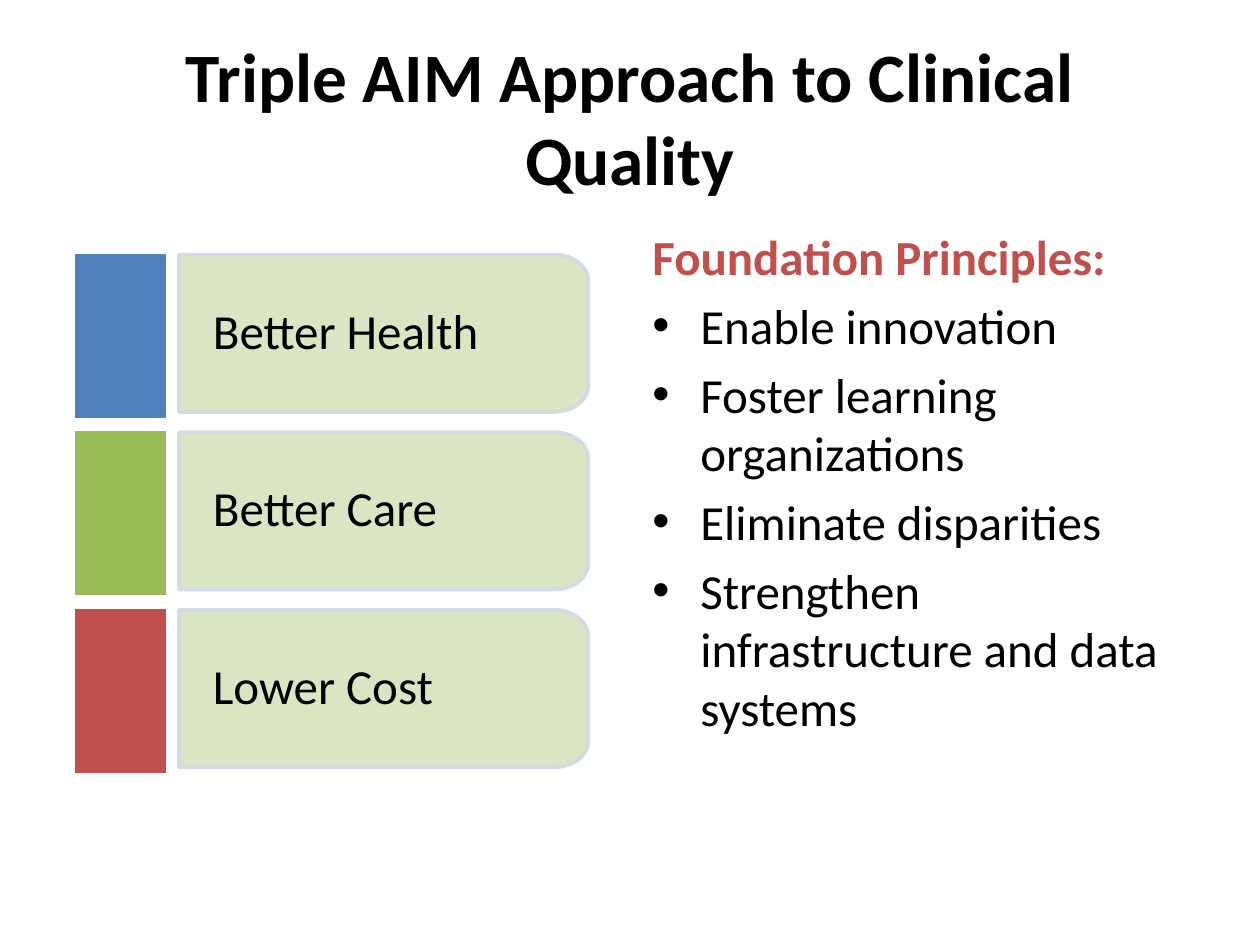
import math

import pptx
import pptx.dml.color
import pptx.enum.shapes
import pptx.enum.text
import pptx.oxml.ns
import pptx.util
from lxml import etree
from pptx.util import Inches

AIMS = [("Better Health", "4F81BD"), ("Better Care", "9BBB59"), ("Lower Cost", "C0504D")]
PRINCIPLES = [
    "Enable innovation",
    "Foster learning organizations",
    "Eliminate disparities",
    "Strengthen infrastructure and data systems",
]


def color(hex_string):
    """Return the colour for a hex string."""
    return pptx.dml.color.RGBColor.from_string(hex_string)


def add_run(paragraph, text, size, hex_string="000000", bold=False):
    """Add one formatted run to a paragraph."""
    run = paragraph.add_run()
    run.text = text
    run.font.name = "Calibri"
    run.font.size = pptx.util.Pt(size)
    run.font.bold = bold
    run.font.color.rgb = color(hex_string)


def style_shape(shape, fill, line, opacity=100):
    """Set fill, outline and opacity, and drop the shadow."""
    shape.shadow.inherit = False
    shape.fill.solid()
    shape.fill.fore_color.rgb = color(fill)
    shape.line.color.rgb = color(line)
    shape.line.width = pptx.util.Pt(2)
    if opacity < 100:
        for element in shape.element.spPr.iter(pptx.oxml.ns.qn("a:srgbClr")):
            alpha = etree.SubElement(element, pptx.oxml.ns.qn("a:alpha"))
            alpha.set("val", str(opacity * 1000))


def set_margins(frame, left, top, right, bottom):
    """Set the four text margins in inches."""
    frame.margin_left, frame.margin_top = Inches(left), Inches(top)
    frame.margin_right, frame.margin_bottom = Inches(right), Inches(bottom)


def add_title(slide, left, top, width, height):
    """Place and fill the title placeholder."""
    title = slide.shapes.title
    title.left, title.top = Inches(left), Inches(top)
    title.width, title.height = Inches(width), Inches(height)
    frame = title.text_frame
    frame.word_wrap = True
    frame.auto_size = pptx.enum.text.MSO_AUTO_SIZE.NONE
    frame.vertical_anchor = pptx.enum.text.MSO_ANCHOR.MIDDLE
    paragraph = frame.paragraphs[0]
    paragraph.alignment = pptx.enum.text.PP_ALIGN.CENTER
    add_run(paragraph, "Triple AIM Approach to Clinical Quality", 39.6, bold=True)


def add_panel(slide, text, left, top, width, height):
    """Draw a labelled panel whose right corners are rounded."""
    radius_x, radius_y = 0.27, 0.21
    right, bottom = left + width, top + height
    angles = [math.radians(degrees) for degrees in range(0, 91, 6)]
    upper = [
        (right - radius_x * (1 - math.sin(angle)), top + radius_y * (1 - math.cos(angle)))
        for angle in angles
    ]
    lower = [(x, top + bottom - y) for x, y in reversed(upper)]
    builder = slide.shapes.build_freeform(Inches(left), Inches(top))
    points = upper + lower + [(left, bottom)]
    builder.add_line_segments([(Inches(x), Inches(y)) for x, y in points], close=True)
    panel = builder.convert_to_shape()
    style_shape(panel, "D7E4BD", "D0D8E8", 90)
    frame = panel.text_frame
    frame.word_wrap = True
    frame.vertical_anchor = pptx.enum.text.MSO_ANCHOR.MIDDLE
    set_margins(frame, 0.27, 0.2, 0.33, 0.2)
    paragraph = frame.paragraphs[0]
    paragraph.alignment = pptx.enum.text.PP_ALIGN.LEFT
    paragraph.line_spacing = 0.9
    add_run(paragraph, text, 28)


def add_aims(slide, left, top, width, pitch):
    """Stack the aims, each a coloured bar beside a panel."""
    bar_width, panel_offset = 0.75, 0.84
    for index, (text, fill) in enumerate(AIMS):
        row_top = top + index * pitch
        add_panel(slide, text, left + panel_offset, row_top + 0.02, width - panel_offset, 1.25)
        bar = slide.shapes.add_shape(
            pptx.enum.shapes.MSO_SHAPE.RECTANGLE,
            Inches(left), Inches(row_top), Inches(bar_width), Inches(1.33),
        )
        style_shape(bar, fill, "FFFFFF")


def add_bullet(paragraph, indent):
    """Give a paragraph a round bullet with a hanging indent."""
    properties = paragraph._p.get_or_add_pPr()
    properties.set("marL", str(Inches(indent)))
    properties.set("indent", str(-Inches(indent)))
    font = etree.SubElement(properties, pptx.oxml.ns.qn("a:buFont"))
    font.set("typeface", "Arial")
    bullet = etree.SubElement(properties, pptx.oxml.ns.qn("a:buChar"))
    bullet.set("char", "•")


def add_principles(slide, left, top, width, height):
    """Write the heading and the bulleted principles."""
    box = slide.shapes.add_textbox(Inches(left), Inches(top), Inches(width), Inches(height))
    frame = box.text_frame
    frame.word_wrap = True
    add_run(frame.paragraphs[0], "Foundation Principles:", 28, "C0504D", True)
    for text in PRINCIPLES:
        paragraph = frame.add_paragraph()
        add_bullet(paragraph, 0.38)
        paragraph.space_before = pptx.util.Pt(5.6)
        add_run(paragraph, text, 28)


def main():
    """Build and save the presentation."""
    presentation = pptx.Presentation()
    presentation.slide_width, presentation.slide_height = Inches(10), Inches(7.5)
    slide = presentation.slides.add_slide(presentation.slide_layouts[5])
    add_title(slide, 0.5, 0.3, 9, 1.25)
    add_principles(slide, 5.08, 1.75, 4.42, 4.95)
    add_aims(slide, 0.58, 2, 4.09, 1.41)
    presentation.save("out.pptx")


if __name__ == "__main__":
    main()
